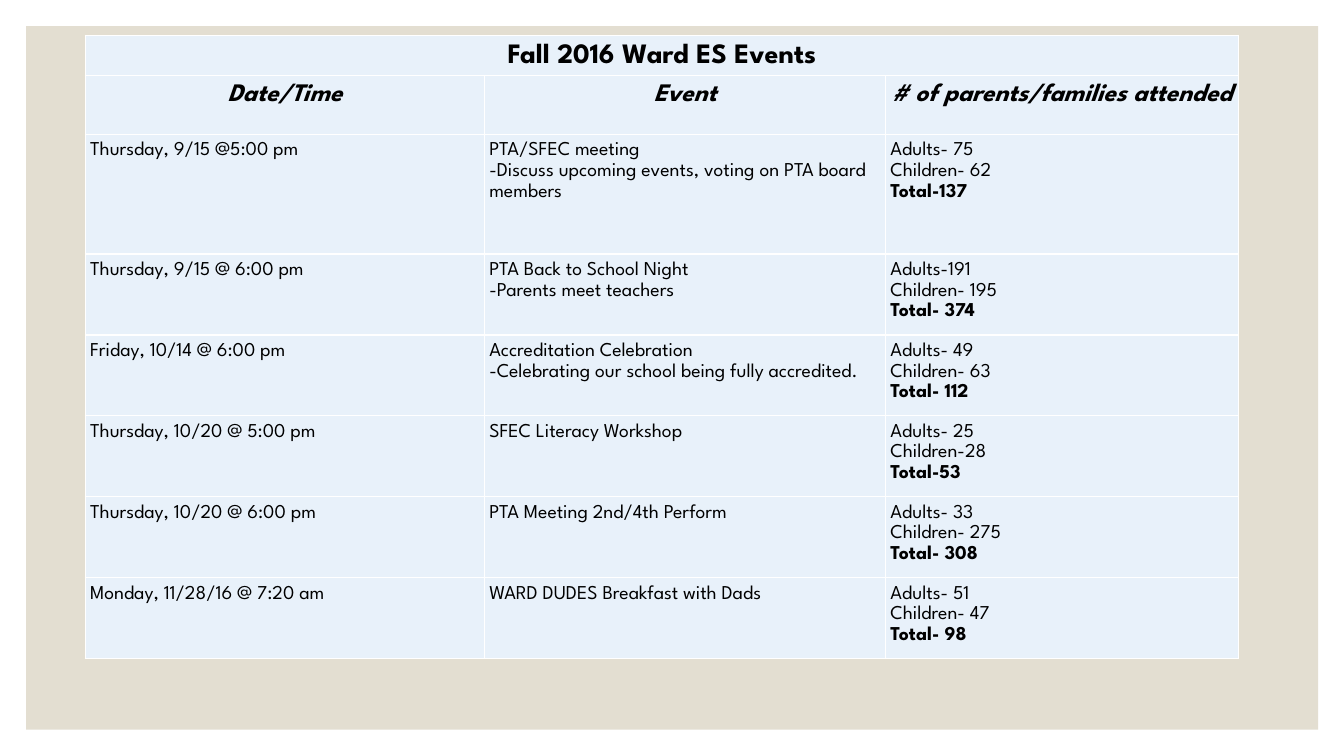
"""Build the Fall 2016 Ward ES events slide."""
from lxml.etree import SubElement
from pptx import Presentation
from pptx.dml.color import RGBColor
from pptx.enum.shapes import MSO_SHAPE
from pptx.enum.text import PP_ALIGN
from pptx.oxml.ns import qn
from pptx.util import Cm, Pt

WHITE = RGBColor(0xFF, 0xFF, 0xFF)
BLACK = RGBColor(0x00, 0x00, 0x00)
SAND = RGBColor(0xE3, 0xDE, 0xD1)
PALE_BLUE = RGBColor(0xE8, 0xF1, 0xFA)

TITLE = "Fall 2016 Ward ES Events"
HEADINGS = ["Date/Time", "Event", "# of parents/families attended"]
EVENTS = [
    ("Thursday, 9/15 @5:00 pm",
     ["PTA/SFEC meeting", "-Discuss upcoming events, voting on PTA board members"],
     ["Adults- 75", "Children- 62", "Total-137"]),
    ("Thursday, 9/15 @ 6:00 pm",
     ["PTA Back to School Night", "-Parents meet teachers"],
     ["Adults-191", "Children- 195", "Total- 374"]),
    ("Friday, 10/14 @ 6:00 pm",
     ["Accreditation Celebration", "-Celebrating our school being fully accredited."],
     ["Adults- 49", "Children- 63", "Total- 112"]),
    ("Thursday, 10/20 @ 5:00 pm",
     ["SFEC Literacy Workshop"],
     ["Adults- 25", "Children-28", "Total-53"]),
    ("Thursday, 10/20 @ 6:00 pm",
     ["PTA Meeting 2nd/4th Perform"],
     ["Adults- 33", "Children- 275", "Total- 308"]),
    ("Monday, 11/28/16 @ 7:20 am",
     ["WARD DUDES Breakfast with Dads"],
     ["Adults- 51", "Children- 47", "Total- 98"]),
]
COLUMN_WIDTHS = [10.06, 10.11, 8.9]
ROW_HEIGHTS = [1.02, 1.47, 3.02] + [2.04] * 5


class EventSlide:
    """Hold the slide and its style."""

    font_name = "League Spartan"
    line_spacing = 1.15
    inset = Cm(0.12)

    def __init__(self, slide):
        self.slide = slide

    def add_panel(self, left, top, width, height):
        """Add the plain backdrop rectangle."""
        shape = self.slide.shapes.add_shape(
            MSO_SHAPE.RECTANGLE, Cm(left), Cm(top), Cm(width), Cm(height))
        shape.shadow.inherit = False
        shape.fill.solid()
        shape.fill.fore_color.rgb = SAND
        shape.line.fill.background()

    def add_table(self, left, top, widths, heights):
        """Add a table of styled empty cells."""
        table = self.slide.shapes.add_table(
            len(heights), len(widths), Cm(left), Cm(top),
            Cm(sum(widths)), Cm(sum(heights))).table
        table.first_row = table.horz_banding = False
        for column, width in zip(table.columns, widths):
            column.width = Cm(width)
        for row, height in zip(table.rows, heights):
            row.height = Cm(height)
        for cell in table.iter_cells():
            self.style_cell(cell)
        return table

    def style_cell(self, cell):
        """Give a cell its borders, insets and fill."""
        cell.margin_left = cell.margin_right = self.inset
        cell.margin_top = cell.margin_bottom = self.inset
        properties = cell._tc.get_or_add_tcPr()
        for side in ("a:lnL", "a:lnR", "a:lnT", "a:lnB"):
            border = SubElement(properties, qn(side), w=str(Pt(1)))
            fill = SubElement(border, qn("a:solidFill"))
            SubElement(fill, qn("a:srgbClr"), val=str(WHITE))
        cell.fill.solid()
        cell.fill.fore_color.rgb = PALE_BLUE

    def add_lines(self, cell, lines, size=14, bold=False, italic=False,
                  alignment=PP_ALIGN.LEFT, bold_last=False):
        """Add each line as a paragraph of the cell."""
        for index, line in enumerate(lines):
            frame = cell.text_frame
            paragraph = frame.add_paragraph() if index else frame.paragraphs[0]
            paragraph.alignment = alignment
            paragraph.line_spacing = self.line_spacing
            run = paragraph.add_run()
            run.text = line
            font = run.font
            font.name = self.font_name
            font.size = Pt(size)
            font.bold = bold or (bold_last and index == len(lines) - 1)
            font.italic = italic
            font.color.rgb = BLACK


def main():
    """Build and save the presentation."""
    presentation = Presentation()
    presentation.slide_width = Cm(33.87)
    presentation.slide_height = Cm(19.05)
    events = EventSlide(presentation.slides.add_slide(presentation.slide_layouts[6]))

    events.add_panel(0.66, 0.66, 32.56, 17.73)
    table = events.add_table(2.15, 0.89, COLUMN_WIDTHS, ROW_HEIGHTS)
    table.cell(0, 0).merge(table.cell(0, 2))
    events.add_lines(table.cell(0, 0), [TITLE], 20, bold=True, alignment=PP_ALIGN.CENTER)
    for column, heading in enumerate(HEADINGS):
        events.add_lines(table.cell(1, column), [heading], 18, bold=True, italic=True,
                         alignment=PP_ALIGN.CENTER)
    for row, (time, description, attendance) in enumerate(EVENTS, start=2):
        events.add_lines(table.cell(row, 0), [time])
        events.add_lines(table.cell(row, 1), description)
        events.add_lines(table.cell(row, 2), attendance, bold_last=True)

    presentation.save("out.pptx")


if __name__ == "__main__":
    main()
